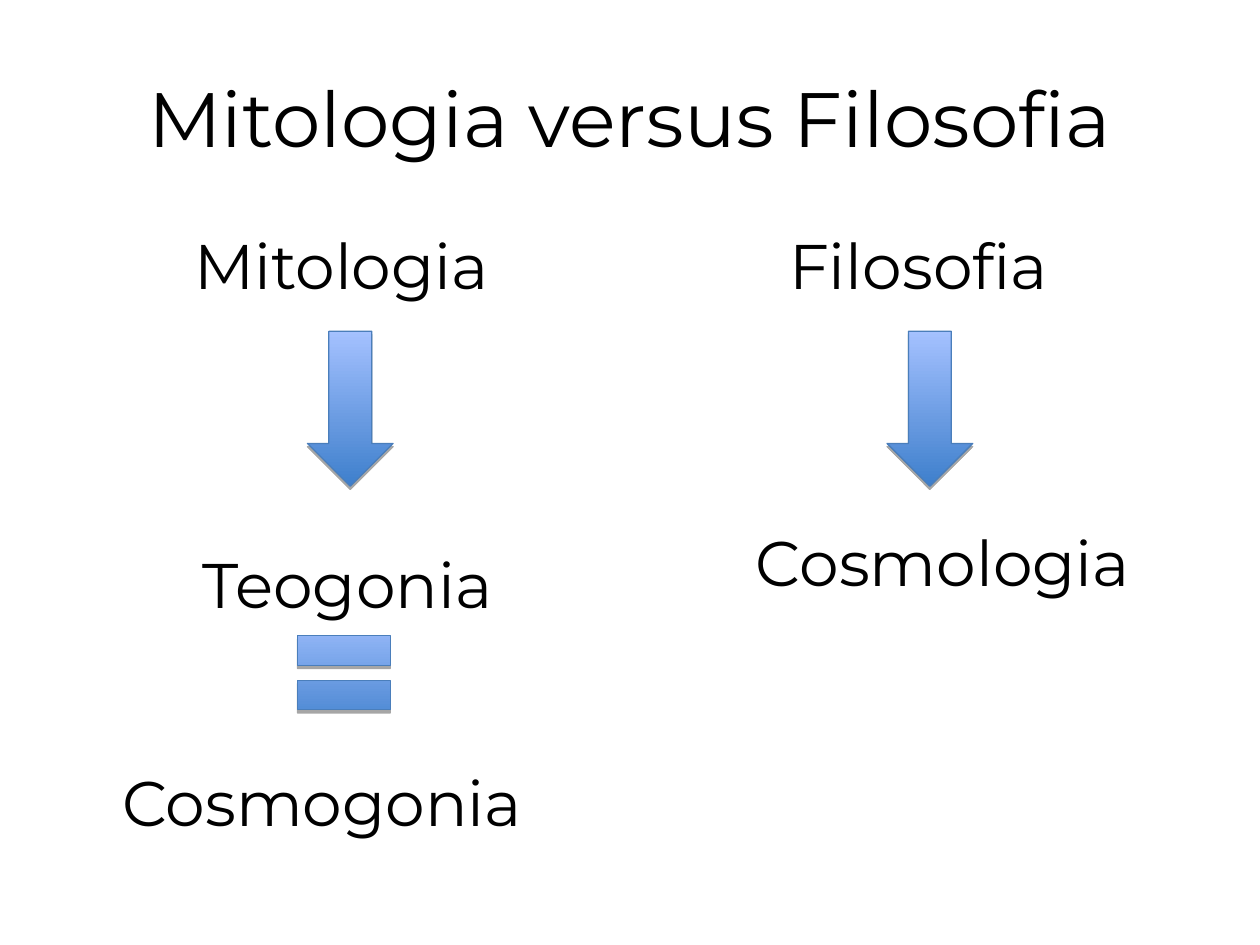
from dataclasses import dataclass

from lxml import etree
from pptx import Presentation
from pptx.dml.color import RGBColor
from pptx.enum import shapes, text
from pptx.oxml import ns
from pptx.slide import Slide
from pptx.util import Inches, Pt

BLACK = RGBColor(0x00, 0x00, 0x00)
DEEP_BLUE = RGBColor(0x3E, 0x7F, 0xCC)
PALE_BLUE = RGBColor(0xA4, 0xC1, 0xFF)
OUTLINE_BLUE = RGBColor(0x4A, 0x7E, 0xBB)
FONT = "Montserrat"


@dataclass(frozen=True)
class Box:
    left: float
    top: float
    width: float
    height: float

    def emu(self) -> tuple:
        return tuple(map(Inches, (self.left, self.top, self.width, self.height)))


@dataclass(frozen=True)
class Label:
    wording: str
    box: Box
    size: int = 36
    align: text.PP_ALIGN = text.PP_ALIGN.LEFT
    anchor: text.MSO_ANCHOR = text.MSO_ANCHOR.TOP


@dataclass(frozen=True)
class Symbol:
    preset: shapes.MSO_SHAPE
    box: Box
    adjustments: tuple[float, float]


CENTER = text.PP_ALIGN.CENTER
LABELS = [
    Label("Mitologia versus Filosofia", Box(0.5, 0.3, 9, 1.25), 44,
          CENTER, text.MSO_ANCHOR.MIDDLE),
    Label("Mitologia", Box(0.5, 1.75, 4.42, 4.95), align=CENTER),
    Label("Filosofia", Box(5.08, 1.75, 4.42, 4.95), align=CENTER),
    Label("Cosmologia", Box(5.9, 4.11, 3.41, 0.7)),
    Label("Cosmogonia", Box(0.87, 6.01, 3.61, 0.7)),
    Label("Teogonia", Box(1.51, 4.28, 3.14, 0.7)),
]

ARROW_LEFTS = (2.44, 7.04)
SYMBOLS = [
    Symbol(shapes.MSO_SHAPE.DOWN_ARROW, Box(left, 2.63, 0.68, 1.23), (0.5, 0.5))
    for left in ARROW_LEFTS
] + [Symbol(shapes.MSO_SHAPE.MATH_EQUAL, Box(2.23, 4.84, 1, 1), (0.235, 0.118))]


def add_label(slide: Slide, label: Label) -> None:
    frame = slide.shapes.add_textbox(*label.box.emu()).text_frame
    frame.word_wrap = True
    frame.vertical_anchor = label.anchor
    frame.text = label.wording
    paragraph = frame.paragraphs[0]
    paragraph.alignment = label.align
    font = paragraph.runs[0].font
    font.name = FONT
    font.size = Pt(label.size)
    font.color.rgb = BLACK


def add_drop_shadow(shape) -> None:
    """Cast a sharp, translucent black shadow straight down."""
    shape.shadow.inherit = False
    effects = shape._element.spPr.find(ns.qn("a:effectLst"))
    shadow = etree.SubElement(
        effects, ns.qn("a:outerShdw"), blurRad="0", dist=str(Pt(1.8)),
        dir="5400000", rotWithShape="0")
    color = etree.SubElement(shadow, ns.qn("a:srgbClr"), val=str(BLACK))
    etree.SubElement(color, ns.qn("a:alpha"), val="35000")


def add_symbol(slide: Slide, symbol: Symbol) -> None:
    shape = slide.shapes.add_shape(symbol.preset, *symbol.box.emu())
    for index, value in enumerate(symbol.adjustments):
        shape.adjustments[index] = value
    shape.fill.gradient()
    shape.fill.gradient_angle = 90
    stops = zip(shape.fill.gradient_stops, (DEEP_BLUE, PALE_BLUE), (0, 1))
    for stop, color, position in stops:
        stop.color.rgb = color
        stop.position = position
    shape.line.color.rgb = OUTLINE_BLUE
    shape.line.width = Pt(0.75)
    add_drop_shadow(shape)


def main() -> None:
    deck = Presentation()
    deck.slide_width, deck.slide_height = Inches(10), Inches(7.5)
    slide = deck.slides.add_slide(deck.slide_layouts[6])
    for label in LABELS:
        add_label(slide, label)
    for symbol in SYMBOLS:
        add_symbol(slide, symbol)
    deck.save("out.pptx")


if __name__ == "__main__":
    main()
